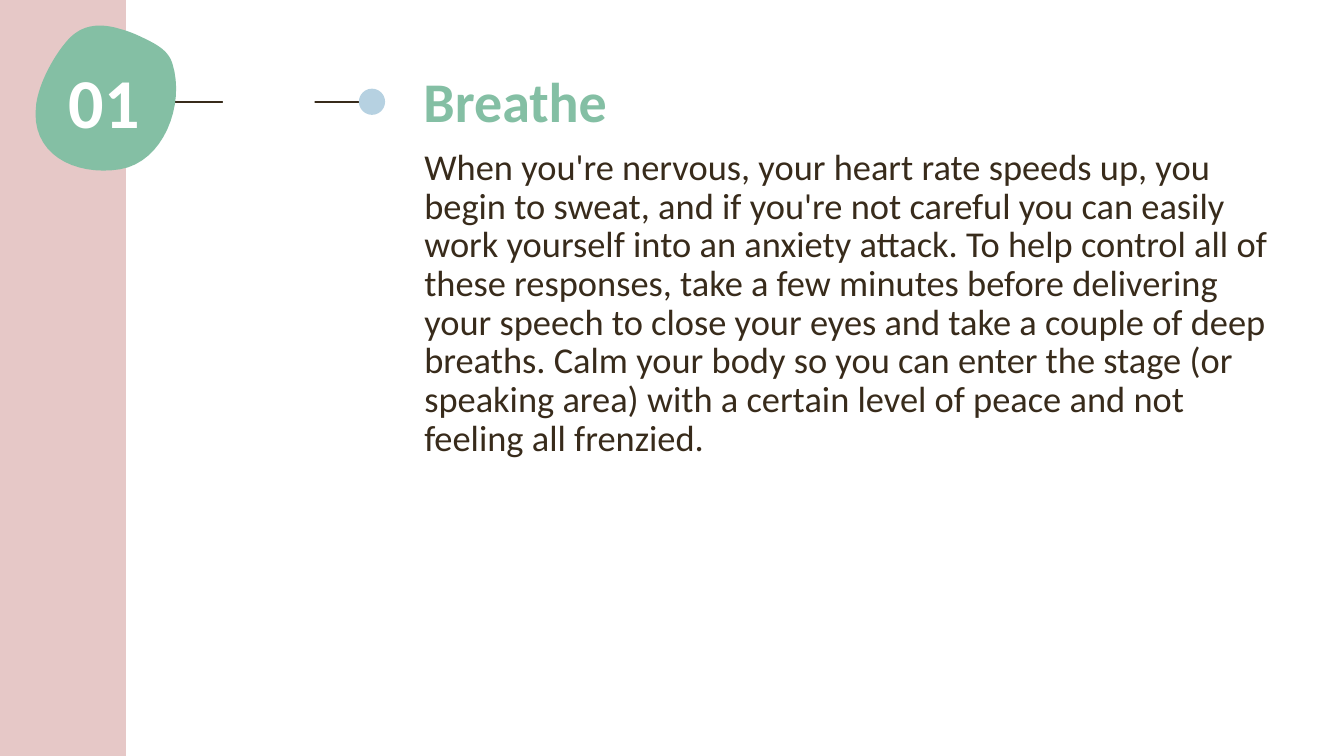
from pptx import Presentation
from pptx.dml.color import RGBColor
from pptx.enum.shapes import MSO_CONNECTOR, MSO_SHAPE
from pptx.enum.text import MSO_ANCHOR, MSO_AUTO_SIZE, PP_ALIGN
from pptx.oxml.ns import qn
from pptx.util import Inches, Pt

PINK = RGBColor(0xE6, 0xC8, 0xC7)
BROWN = RGBColor(0x38, 0x2B, 0x1B)
BLUE = RGBColor(0xB6, 0xD1, 0xE1)
GREEN = RGBColor(0x84, 0xBF, 0xA4)
WHITE = RGBColor(0xFF, 0xFF, 0xFF)


def paint(shape, color):
    shape.shadow.inherit = False
    shape.fill.solid()
    shape.fill.fore_color.rgb = color
    shape.line.fill.background()


def write(box, text, size, color, bold, align, spacing):
    frame = box.text_frame
    frame.text = text
    frame.word_wrap = True
    frame.auto_size = MSO_AUTO_SIZE.NONE
    frame.vertical_anchor = MSO_ANCHOR.TOP
    paragraph = frame.paragraphs[0]
    paragraph.alignment = align
    paragraph.line_spacing = spacing
    paragraph.space_before = Pt(0)
    font = paragraph.runs[0].font
    font.name = "Calibri"
    font.size = Pt(size)
    font.bold = bold
    font.color.rgb = color


prs = Presentation()
prs.slide_width, prs.slide_height = Inches(13.33), Inches(7.5)
slide = prs.slides.add_slide(prs.slide_layouts[5])
shapes = slide.shapes

# Side band
band = shapes.add_shape(MSO_SHAPE.RECTANGLE, 0, 0, Inches(1.25), prs.slide_height)
paint(band, PINK)

# Heading and advice
heading = shapes.title
heading.left, heading.top = Inches(4.1), Inches(0.72)
heading.width, heading.height = Inches(8.4), Inches(0.71)
write(heading, "Breathe", 40, GREEN, True, PP_ALIGN.LEFT, Pt(40.2))

advice = shapes.add_textbox(Inches(4.11), Inches(1.43), Inches(8.71), Inches(2.08))
write(
    advice,
    "When you're nervous, your heart rate speeds up, you begin to sweat, and if "
    "you're not careful you can easily work yourself into an anxiety attack. To help "
    "control all of these responses, take a few minutes before delivering your speech "
    "to close your eyes and take a couple of deep breaths. Calm your body so you can "
    "enter the stage (or speaking area) with a certain level of peace and not feeling "
    "all frenzied.",
    26, BROWN, False, PP_ALIGN.LEFT, Pt(27.6),
)

# Line from the number to the heading, ending in a dot
link = shapes.add_connector(
    MSO_CONNECTOR.STRAIGHT, Inches(3.64), Inches(1.01), Inches(1.51), Inches(1.01)
)
link.line.color.rgb = BROWN
link.line.width = Pt(1.5)
properties = link.line._get_or_add_ln().getparent()
properties.append(properties.makeelement(qn("a:effectLst"), {}))

dot = shapes.add_shape(
    MSO_SHAPE.OVAL, Inches(3.56), Inches(0.88), Inches(0.26), Inches(0.26)
)
paint(dot, BLUE)

# Rounded blob behind the number: cubic curves sampled into short segments
blob_start = (1.2, 0.29)
blob_curves = [
    ((1.01, 0.23), (0.82, 0.23), (0.67, 0.4)),
    ((0.53, 0.56), (0.39, 0.82), (0.36, 1.03)),
    ((0.29, 1.53), (0.74, 1.75), (1.19, 1.68)),
    ((1.62, 1.61), (1.84, 1.04), (1.71, 0.63)),
    ((1.67, 0.5), (1.55, 0.44), (1.45, 0.39)),
    ((1.37, 0.35), (1.28, 0.31), (1.2, 0.29)),
]
STEPS = 16
outline = []
start = blob_start
for control_1, control_2, end in blob_curves:
    for step in range(1, STEPS + 1):
        t = step / STEPS
        u = 1 - t
        outline.append(tuple(
            Inches(u**3 * a + 3 * u**2 * t * b + 3 * u * t**2 * c + t**3 * d)
            for a, b, c, d in zip(start, control_1, control_2, end)
        ))
    start = end
builder = shapes.build_freeform(Inches(blob_start[0]), Inches(blob_start[1]))
builder.add_line_segments(outline, close=True)
paint(builder.convert_to_shape(), GREEN)

# Step number
number = shapes.add_textbox(Inches(0.19), Inches(0.63), Inches(1.69), Inches(0.94))
write(number, "01", 50, WHITE, True, PP_ALIGN.CENTER, 0.9)

# White panel that breaks the line
gap = shapes.add_shape(
    MSO_SHAPE.RECTANGLE, Inches(2.21), Inches(0.61), Inches(0.91), Inches(4.56)
)
paint(gap, WHITE)

prs.save("out.pptx")
